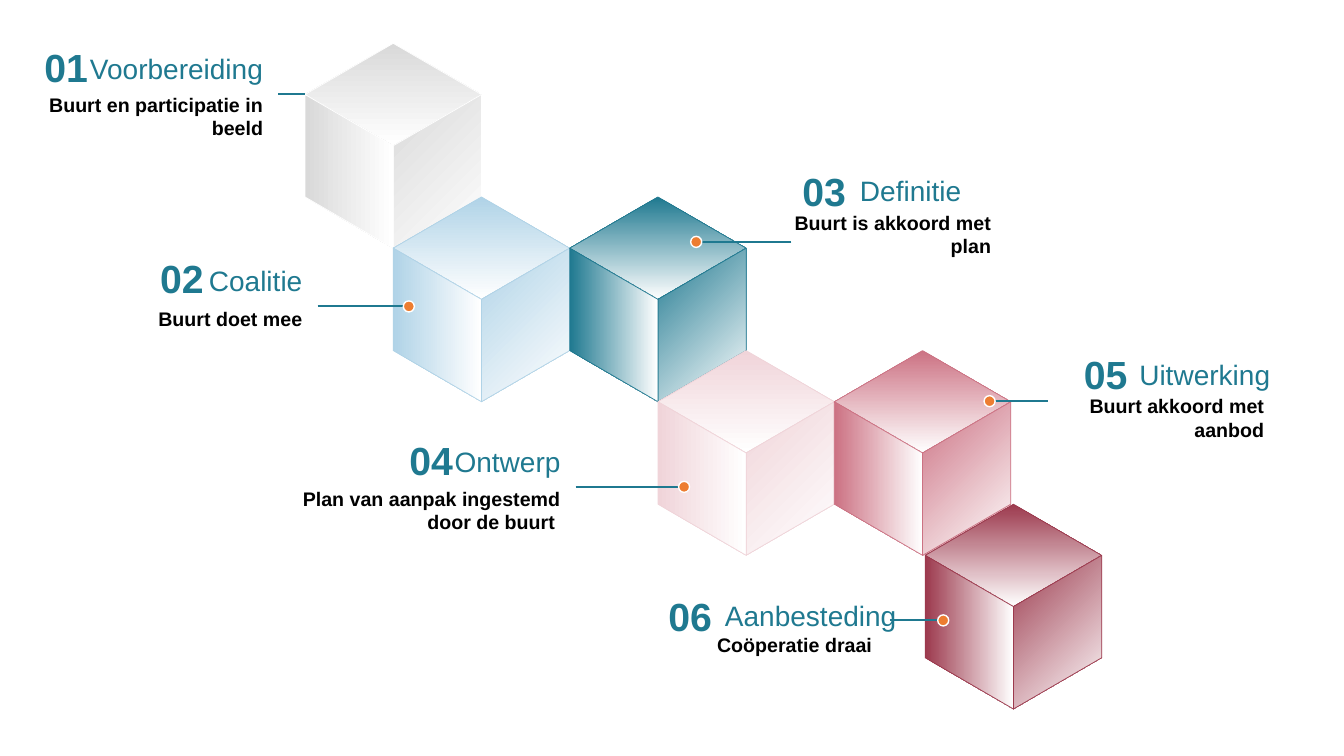
from dataclasses import dataclass
from lxml import etree
from pptx import Presentation
from pptx import util as u
from pptx.dml.color import RGBColor
from pptx.enum import shapes, text
from pptx.oxml.ns import qn

LEFT, MID, RIGHT = text.PP_ALIGN.LEFT, text.PP_ALIGN.CENTER, text.PP_ALIGN.RIGHT
TOP, CORE, BASE = text.MSO_ANCHOR.TOP, text.MSO_ANCHOR.MIDDLE, text.MSO_ANCHOR.BOTTOM

# Grid cells are 0.1 inch; places are (column, row).
# num: corner of the number; head: (side, its column, row)
# note: (right column, row, width, lines); line: (label column, cube column, row)
STEPS = [
    dict(name="Voorbereiding", about="Buurt en participatie in beeld",
         num=(4.2, 4.3), head=(RIGHT, 26.1, 5), note=(26.1, 9.2, 25.8, 2),
         line=(27.6, 30.3, 9.3), dot=False),
    dict(name="Coalitie", about="Buurt doet mee",
         num=(15.7, 25.2), head=(RIGHT, 30, 26.1), note=(30, 30.4, 25.8, 1),
         line=(31.5, 40.55, 30.4), dot=True),
    dict(name="Definitie", about="Buurt is akkoord met plan",
         num=(79.4, 16.6), head=(LEFT, 85.3, 17.1), note=(98.3, 20.9, 22.1, 2),
         line=(78.5, 69.05, 24), dot=True),
    dict(name="Ontwerp", about="Plan van aanpak ingestemd door de buurt ",
         num=(40.4, 43.3), head=(RIGHT, 55.6, 44), note=(55.6, 48.3, 25.8, 2),
         line=(57.1, 67.85, 48.3), dot=True),
    dict(name="Uitwerking", about="Buurt akkoord met aanbod",
         num=(107.3, 34.7), head=(LEFT, 113, 35.4), note=(125.4, 39.1, 19.6, 2),
         line=(103.9, 98.15, 39.8), dot=True),
    dict(name="Aanbesteding", about="Coöperatie draai",
         num=(66.1, 58.7), head=(LEFT, 71.9, 59.3), note=(86.5, 62.8, 25.8, 1),
         line=(88.3, 93.55, 61.55), dot=True),
]

# Stair of cubes: (half-cube steps right, cube steps down, colour, edge)
CUBES = [
    (0, 0, "D9D9D9", "FFFFFF"),
    (1, 1, "B0D3E7", "B0D3E7"),
    (3, 1, "1F7990", "1F7990"),
    (4, 2, "F0D4D9", "F0D4D9"),
    (6, 2, "CC7283", "CC7283"),
    (7.03, 3, "9C394D", "9C394D"),
]
APEX = (39, 4.3)
HALF, RISE = 8.75, 5.08  # half a cube's width, and a third of its height step

# Corners in halves and rises from the apex, with gradient angle
FACES = [
    ([(0, 2), (-1, 1), (0, 0), (1, 1)], 270),
    ([(0, 4), (0, 2), (1, 1), (1, 3)], 315),
    ([(0, 4), (0, 2), (-1, 1), (-1, 3)], 0),
]


@dataclass
class Theme:
    font: str = "Arial"
    teal: str = "1F7990"
    ink: str = "000000"
    white: str = "FFFFFF"
    dot: str = "ED7D31"
    num: int = 28
    head: int = 20
    note: int = 14


THEME = Theme()
NUM = dict(size=u.Pt(THEME.num), bold=True, name=THEME.font)
HEAD = dict(size=u.Pt(THEME.head), bold=False, name=THEME.font)
NOTE = dict(size=u.Pt(THEME.note), bold=True, name=THEME.font)


def cell(n):
    """Length of n grid cells."""
    return u.Inches(n / 10)


def rgb(code):
    return RGBColor.from_string(code)


def edge(shape, color, width):
    shape.line.color.rgb = rgb(color)
    shape.line.width = u.Pt(width)


def write(slide, words, box, look, color, align, anchor):
    frame = slide.shapes.add_textbox(*map(cell, box)).text_frame
    form = dict(margin_left=0, margin_right=0, margin_top=0, margin_bottom=0,
                word_wrap=True, vertical_anchor=anchor)
    for key, value in form.items():
        setattr(frame, key, value)
    para = frame.paragraphs[0]
    para.alignment = align
    run = para.add_run()
    run.text = words
    for key, value in look.items():
        setattr(run.font, key, value)
    run.font.color.rgb = rgb(color)


def draw_cube(slide, right, down, color, rim):
    cube = slide.shapes.add_group_shape()
    left, top = APEX[0] + right * HALF, APEX[1] + down * 3 * RISE
    for face, angle in FACES:
        points = [(cell(left + x * HALF), cell(top + y * RISE)) for x, y in face]
        pen = cube.shapes.build_freeform(*points[0], scale=1.0)
        pen.add_line_segments(points[1:], close=True)
        side = pen.convert_to_shape()
        side.shadow.inherit = False
        side.fill.gradient()
        side.fill.gradient_angle = angle
        for stop, shade in zip(side.fill.gradient_stops, (color, THEME.white)):
            stop.color.rgb = rgb(shade)
        edge(side, rim, 0.5)


def draw_link(slide, start, end, row, dot):
    """Line from a label to its cube, with a dot on the cube."""
    line = slide.shapes.add_connector(
        shapes.MSO_CONNECTOR.STRAIGHT, cell(start), cell(row), cell(end), cell(row))
    edge(line, THEME.teal, 1.5)
    etree.SubElement(line.element.spPr, qn("a:effectLst"))
    if dot:
        size = 1.1
        mark = slide.shapes.add_shape(
            shapes.MSO_SHAPE.OVAL, cell(end - size / 2), cell(row - size / 2),
            cell(size), cell(size))
        mark.shadow.inherit = False
        mark.fill.solid()
        mark.fill.fore_color.rgb = rgb(THEME.dot)
        edge(mark, THEME.white, 1)


def draw_label(slide, count, step):
    write(slide, f"{count:02}", (*step["num"], 4.7, 4.7), NUM, THEME.teal, MID, CORE)
    side, col, row = step["head"]
    wide = 18
    left = col - wide if side == RIGHT else col
    write(slide, step["name"], (left, row, wide, 3.4), HEAD, THEME.teal, side, BASE)
    end, row, wide, lines = step["note"]
    write(slide, step["about"], (end - wide, row, wide, lines * 2.35),
          NOTE, THEME.ink, RIGHT, TOP)


def main():
    deck = Presentation()
    deck.slide_width, deck.slide_height = u.Inches(13.33), u.Inches(7.5)
    slide = deck.slides.add_slide(deck.slide_layouts[6])
    for cube in CUBES:
        draw_cube(slide, *cube)
    for count, step in enumerate(STEPS, 1):
        draw_label(slide, count, step)
        draw_link(slide, *step["line"], step["dot"])
    deck.save("out.pptx")


if __name__ == "__main__":
    main()
